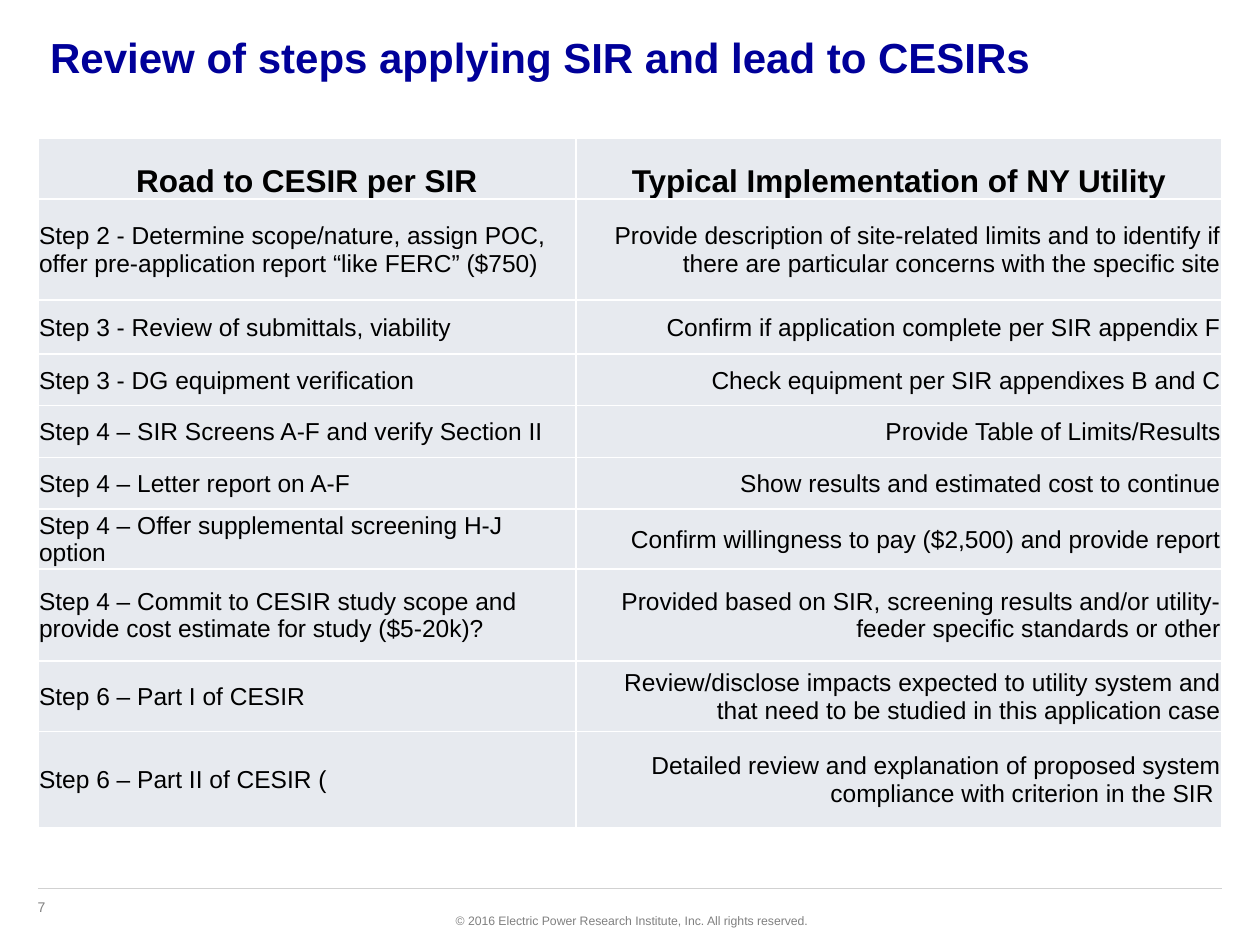
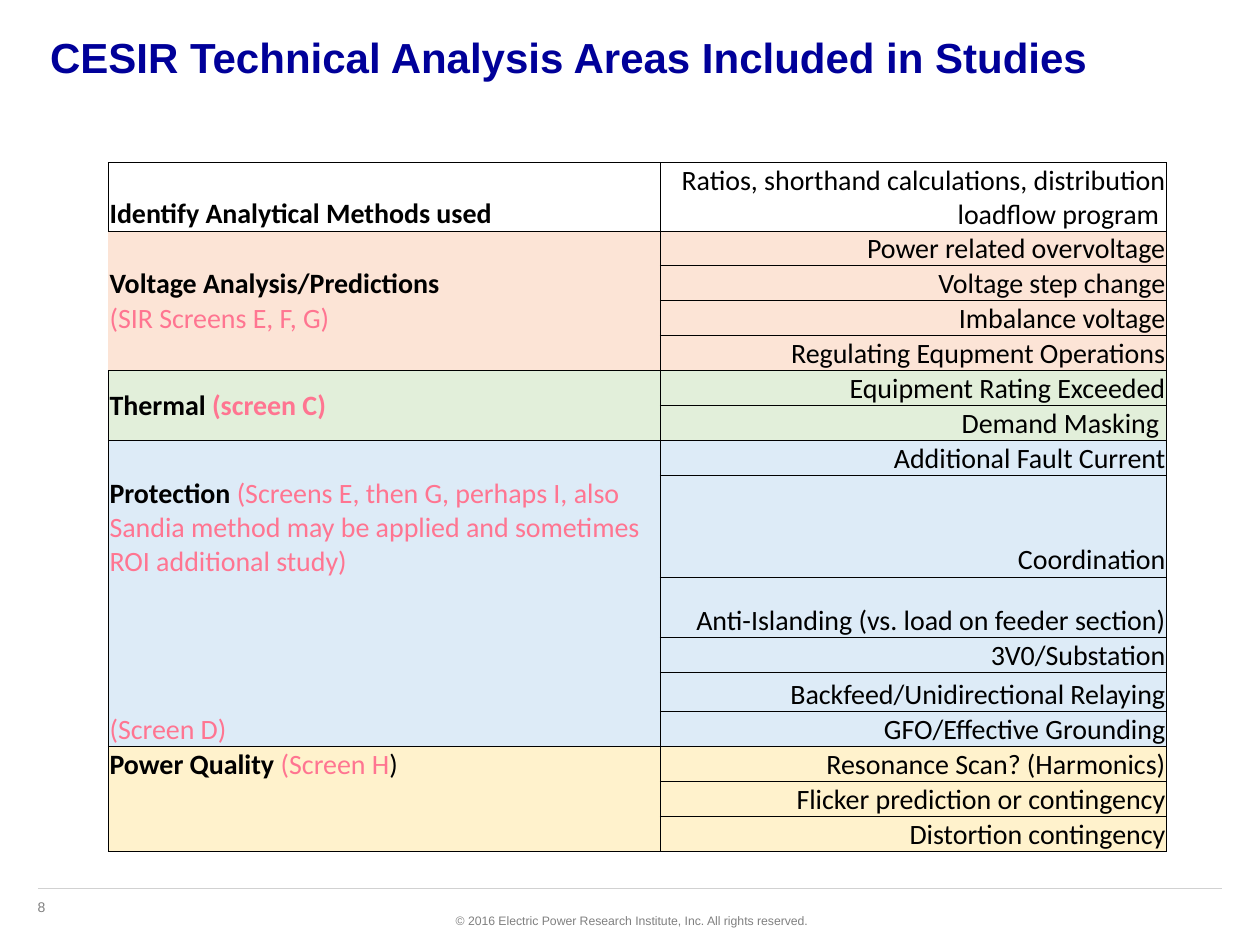
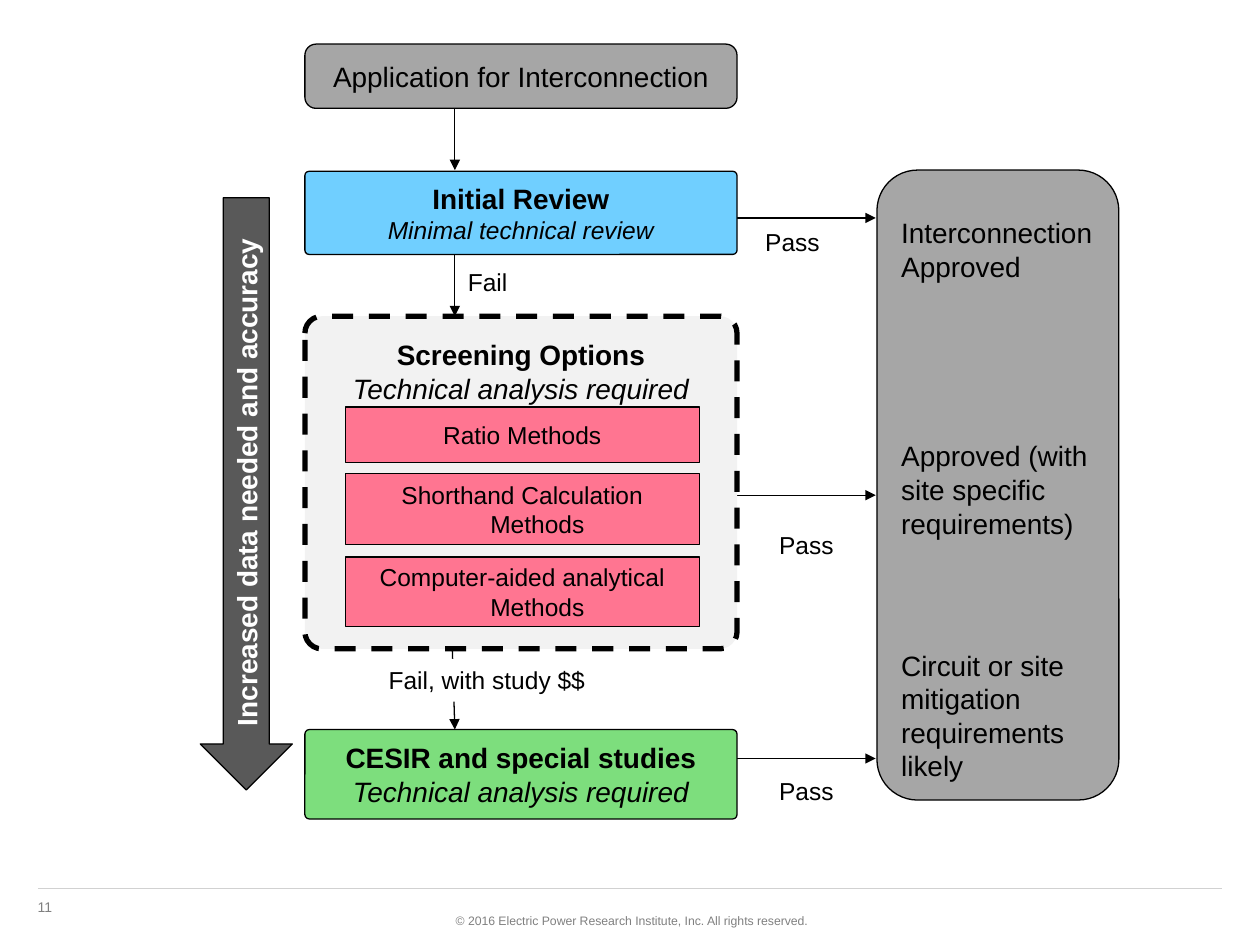
import pptx
import pptx.util
import pptx.dml.color
import pptx.enum.dml
import pptx.enum.shapes
import pptx.enum.text
import pptx.oxml.ns
from lxml import etree

Inches = pptx.util.Inches
Pt = pptx.util.Pt
Kind = pptx.enum.shapes.MSO_SHAPE
Align = pptx.enum.text.PP_ALIGN
Anchor = pptx.enum.text.MSO_ANCHOR
qn = pptx.oxml.ns.qn

HUES = {
    "black": "000000", "white": "FFFFFF", "title": "000099", "foot": "808080",
    "rule": "D1D1D1", "cell": "E7EAEF", "pink": "FF7591", "peach": "FCE4D6",
    "mint": "E2EFDA", "ice": "DDEBF7", "cream": "FFF2CC", "sky": "70CFFF",
    "grey": "A6A6A6", "green": "7DDE7D", "pale": "F2F2F2", "dark": "595959",
}
ALIGNS = {"l": Align.LEFT, "c": Align.CENTER, "r": Align.RIGHT}
CREDIT = "© 2016 Electric Power Research Institute, Inc. All rights reserved."

STEPS_TITLE = "Review of steps applying SIR and lead to CESIRs"
STEPS_HEAD = ("Road to CESIR per SIR", "Typical Implementation of NY Utility")
STEPS = [
    (0.8, "Step 2 - Determine scope/nature, assign POC, offer pre-application report “like FERC” ($750)",
     "Provide description of site-related limits and to identify if there are particular concerns with the specific site"),
    (0.43, "Step 3 - Review of submittals, viability",
     "Confirm if application complete per SIR appendix F"),
    (0.41, "Step 3 - DG equipment verification",
     "Check equipment per SIR appendixes B and C"),
    (0.41, "Step 4 – SIR Screens A-F and verify Section II",
     "Provide Table of Limits/Results"),
    (0.41, "Step 4 – Letter report on A-F",
     "Show results and estimated cost to continue"),
    (0.43, "Step 4 – Offer supplemental screening H-J option",
     "Confirm willingness to pay ($2,500) and provide report"),
    (0.73, "Step 4 – Commit to CESIR study scope and provide cost estimate for study ($5-20k)?",
     "Provided based on SIR, screening results and/or utility- feeder specific standards or other"),
    (0.56, "Step 6 – Part I of CESIR",
     "Review/disclose impacts expected to utility system and that need to be studied in this application case"),
    (0.76, "Step 6 – Part II of CESIR (",
     "Detailed review and explanation of proposed system compliance with criterion in the SIR "),
]

# Run marks: b bold, i italic, p pink
AREAS_TITLE = "CESIR Technical Analysis Areas Included in Studies"
AREAS = [  # fill, left edge drawn, merged, rows of (height, left runs, right text)
    (None, True, False, [
        (0.51, [("Identify Analytical Methods used", "b")],
         "Ratios, shorthand calculations, distribution loadflow program ")]),
    ("peach", False, False, [
        (0.26, [], "Power related overvoltage"),
        (0.26, [("Voltage Analysis/Predictions", "b")], "Voltage step change"),
        (0.26, [("(SIR Screens E, F, G)", "p")], "Imbalance voltage"),
        (0.26, [], "Regulating Equpment Operations")]),
    ("mint", True, True, [
        (0.26, [("Thermal ", "b"), ("(screen C)", "bp")], "Equipment Rating Exceeded"),
        (0.26, [], "Demand Masking ")]),
    ("ice", True, False, [
        (0.26, [], "Additional Fault Current"),
        (0.48, [("Protection ", "b"),
                ("(Screens E, then G, perhaps I, also Sandia method may be applied "
                 "and sometimes ROI additional study)", "p")], "Coordination"),
        (0.48, [], "Anti-Islanding (vs. load on feeder section)"),
        (0.26, [], "3V0/Substation"),
        (0.31, [], "Backfeed/Unidirectional Relaying"),
        (0.26, [("(Screen D)", "p")], "GFO/Effective Grounding")]),
    ("cream", True, False, [
        (0.26, [("Power Quality ", "b"), ("(Screen H", "p"), (")", "")],
         "Resonance Scan? (Harmonics)"),
        (0.26, [], "Flicker prediction or contingency"),
        (0.26, [], "Distortion contingency")]),
]

STAGES = [  # top, height, corner, fill, lines of (text, size, marks)
    (0.35, 0.51, 0.173, "grey", [("Application for Interconnection", 16, "")]),
    (1.36, 0.66, 0.051, "sky", [("Initial Review", 16, "b"),
                                ("Minimal technical review", 14, "i")]),
    (2.51, 2.64, 0.051, "pale", [("Screening Options", 16, "b"),
                                 ("Technical analysis required", 16, "i")]),
    (5.79, 0.71, 0.051, "green", [("CESIR and special studies", 16, "b"),
                                  ("Technical analysis required", 16, "i")]),
]
METHODS = [(3.23, 0.44, "Ratio Methods"),
           (3.76, 0.56, "Shorthand Calculation Methods"),
           (4.42, 0.55, "Computer-aided analytical Methods")]
RESULTS = [("Interconnection Approved", 0),  # text, points before
           ("Approved (with site specific requirements)", 89),
           ("Circuit or site mitigation requirements likely", 62)]
ARROWS = [(3.61, 0.85, 3.61, 1.35), (3.61, 2.01, 3.61, 2.51), (3.59, 5.15, 3.61, 5.79),
          (5.85, 1.73, 6.95, 1.73), (5.85, 3.93, 6.95, 3.93), (5.85, 6.02, 6.95, 6.02)]
LABELS = [("Fail", 3.61, 2.07, 0.52), ("Pass", 5.97, 1.75, 0.64),
          ("Pass", 6.08, 4.16, 0.64), ("Pass", 6.08, 6.11, 0.64)]
TREND = "Increased data needed and accuracy"


def rgb(name):
    return pptx.dml.color.RGBColor.from_string(HUES[name])


def style(run, size, marks="", hue="black", face="Arial"):
    font = run.font
    font.name, font.size = face, Pt(size)
    font.bold, font.italic = "b" in marks, "i" in marks
    font.color.rgb = rgb("pink" if "p" in marks else hue)


def write(frame, lines, align="l", hue="black"):
    """Fill a frame with one paragraph for each (text, size, marks)."""
    frame.text = "\n".join(text for text, size, marks in lines)
    for para, (text, size, marks) in zip(frame.paragraphs, lines):
        para.alignment = ALIGNS[align]
        for run in para.runs:
            style(run, size, marks, hue)


def hang(frame):
    """Give the paragraphs a hanging indent."""
    for para in frame.paragraphs:
        props = para._p.get_or_add_pPr()
        props.set("marL", str(Inches(0.24)))
        props.set("indent", str(-Inches(0.24)))


def label(slide, spot, text, size, align="l", hue="black", marks="", wrap=True):
    box = slide.shapes.add_textbox(*map(Inches, spot))
    box.text_frame.word_wrap = wrap
    write(box.text_frame, [(text, size, marks)], align, hue)
    return box


def block(slide, kind, spot, fill, corner=None):
    shape = slide.shapes.add_shape(kind, *map(Inches, spot))
    shape.shadow.inherit = False
    shape.fill.solid()
    shape.fill.fore_color.rgb = rgb(fill)
    shape.line.color.rgb = rgb("black")
    shape.line.width = Pt(0.75)
    if corner:
        shape.adjustments[0] = corner
    shape.text_frame.word_wrap = True
    shape.text_frame.vertical_anchor = Anchor.MIDDLE
    return shape


def rule(slide, ends, hue, head=False):
    line = slide.shapes.add_connector(
        pptx.enum.shapes.MSO_CONNECTOR.STRAIGHT, *map(Inches, ends))
    line.line.color.rgb = rgb(hue)
    line.line.width = Pt(0.75)
    if head:
        etree.SubElement(line.line._get_or_add_ln(), qn("a:tailEnd"), type="triangle")
    etree.SubElement(line._element.spPr, qn("a:effectLst"))


def start(deck, number, title=None):
    """Add a slide with its footer and title."""
    slide = deck.slides.add_slide(deck.slide_layouts[6])
    label(slide, (0.2, 7.08, 0.66, 0.24), str(number), 8, hue="foot")
    rule(slide, (0.3, 7.05, 9.7, 7.05), "rule")
    label(slide, (3.49, 7.2, 3.02, 0.22), CREDIT, 7, "r", "foot", wrap=False)
    if title:
        label(slide, (0.3, 0.2, 9.4, 0.8), title, 24, hue="title", marks="b")
    return slide


def grid(slide, left, top, cols, rows):
    table = slide.shapes.add_table(
        len(rows), len(cols), *map(Inches, (left, top, sum(cols), sum(rows)))).table
    table.first_row = table.horz_banding = False
    for col, width in zip(table.columns, cols):
        col.width = Inches(width)
    for row, height in zip(table.rows, rows):
        row.height = Inches(height)
    return table


def dress(cell, runs, size, face, align, anchor, fill, hue, width, sides="LRTB"):
    """Set text, edges and fill of a cell; edges not in sides are left clear."""
    cell.margin_left = cell.margin_right = cell.margin_top = Inches(0.01)
    cell.margin_bottom = 0
    cell.vertical_anchor = anchor
    para = cell.text_frame.paragraphs[0]
    para.alignment = ALIGNS[align]
    for text, marks in runs:
        run = para.add_run()
        run.text = text
        style(run, size, marks, face=face)
    if not runs:
        etree.SubElement(para._p, qn("a:endParaRPr"), sz="1000")
    props = cell._tc.get_or_add_tcPr()
    for side in "LRTB":
        edge = etree.SubElement(props, qn("a:ln" + side), w=str(Pt(width)))
        if side in sides:
            paint = etree.SubElement(edge, qn("a:solidFill"))
            etree.SubElement(paint, qn("a:srgbClr"), val=HUES[hue])
        else:
            etree.SubElement(edge, qn("a:noFill"))
    if fill:
        cell.fill.solid()
        cell.fill.fore_color.rgb = rgb(fill)
    else:
        cell.fill.background()


def steps(deck):
    slide = start(deck, 7, STEPS_TITLE)
    rows = [(0.48, *STEPS_HEAD)] + STEPS
    table = grid(slide, 0.3, 1.1, (4.27, 5.13), [row[0] for row in rows])
    for r, row in enumerate(rows):
        for c, text in enumerate(row[1:]):
            if r == 0:
                look = ([(text, "b")], 18, "Arial", "c", Anchor.BOTTOM)
            else:
                look = ([(text, "")], 14, "Arial", "lr"[c], Anchor.MIDDLE)
            dress(table.cell(r, c), *look, "cell", "white", 1)


def areas(deck):
    slide = start(deck, 8, AREAS_TITLE)
    sizes = [row[0] for group in AREAS for row in group[3]]
    table = grid(slide, 0.86, 1.29, (4.38, 4.02), sizes)
    r = 0
    for fill, edged, merged, rows in AREAS:
        last = len(rows) - 1
        for n, (height, runs, text) in enumerate(rows):
            sides = "R" + "L" * edged + "T" * (n == 0) + "B" * (n == last or merged)
            anchor = Anchor.MIDDLE if fill else Anchor.BOTTOM
            dress(table.cell(r + n, 0), runs, 16, "Calibri", "l", anchor,
                  fill, "black", 0.5, sides)
            dress(table.cell(r + n, 1), [(text, "")], 16, "Calibri", "r",
                  Anchor.BOTTOM, fill, "black", 0.5)
        if merged:
            table.cell(r, 0).merge(table.cell(r + last, 0))
        r += len(rows)


def flow(deck):
    slide = start(deck, 11)
    for ends in ARROWS:
        rule(slide, ends, "black", head=True)
    for top, height, corner, fill, lines in STAGES:
        stage = block(slide, Kind.ROUNDED_RECTANGLE, (2.42, top, 3.43, height), fill, corner)
        write(stage.text_frame, lines, "c")
        if fill == "pale":
            stage.line.width = Pt(3)
            stage.line.dash_style = pptx.enum.dml.MSO_LINE.DASH
            stage.text_frame.vertical_anchor = Anchor.TOP
            stage.text_frame.margin_top = Inches(0.13)
    for top, height, text in METHODS:
        way = block(slide, Kind.RECTANGLE, (2.74, top, 2.81, height), "pink")
        write(way.text_frame, [(text, 14, "")], "c")
        hang(way.text_frame)

    done = block(slide, Kind.ROUNDED_RECTANGLE, (6.96, 1.35, 1.92, 5), "grey", 0.168)
    frame = done.text_frame
    frame.vertical_anchor = Anchor.TOP
    frame.margin_top = Inches(0.27)
    write(frame, [(text, 16, "") for text, gap in RESULTS])
    for para, (text, gap) in zip(frame.paragraphs, RESULTS):
        para.space_before = Pt(gap)

    for text, left, top, width in LABELS:
        label(slide, (left, top, width, 0.34), text, 14, "c", wrap=False)
    study = label(slide, (2.98, 5.23, 1.77, 0.34), "Fail, with study $$", 14, "c", wrap=False)
    study.fill.solid()
    study.fill.fore_color.rgb = rgb("white")

    trend = block(slide, Kind.DOWN_ARROW, (1.59, 1.57, 0.73, 4.7), "dark")
    write(trend.text_frame, [(TREND, 16, "b")], "c", "white")
    hang(trend.text_frame)
    trend.text_frame._txBody.bodyPr.set("vert", "vert270")


def main():
    deck = pptx.Presentation()
    deck.slide_width, deck.slide_height = Inches(10), Inches(7.5)
    steps(deck)
    areas(deck)
    flow(deck)
    deck.save("out.pptx")


if __name__ == "__main__":
    main()
